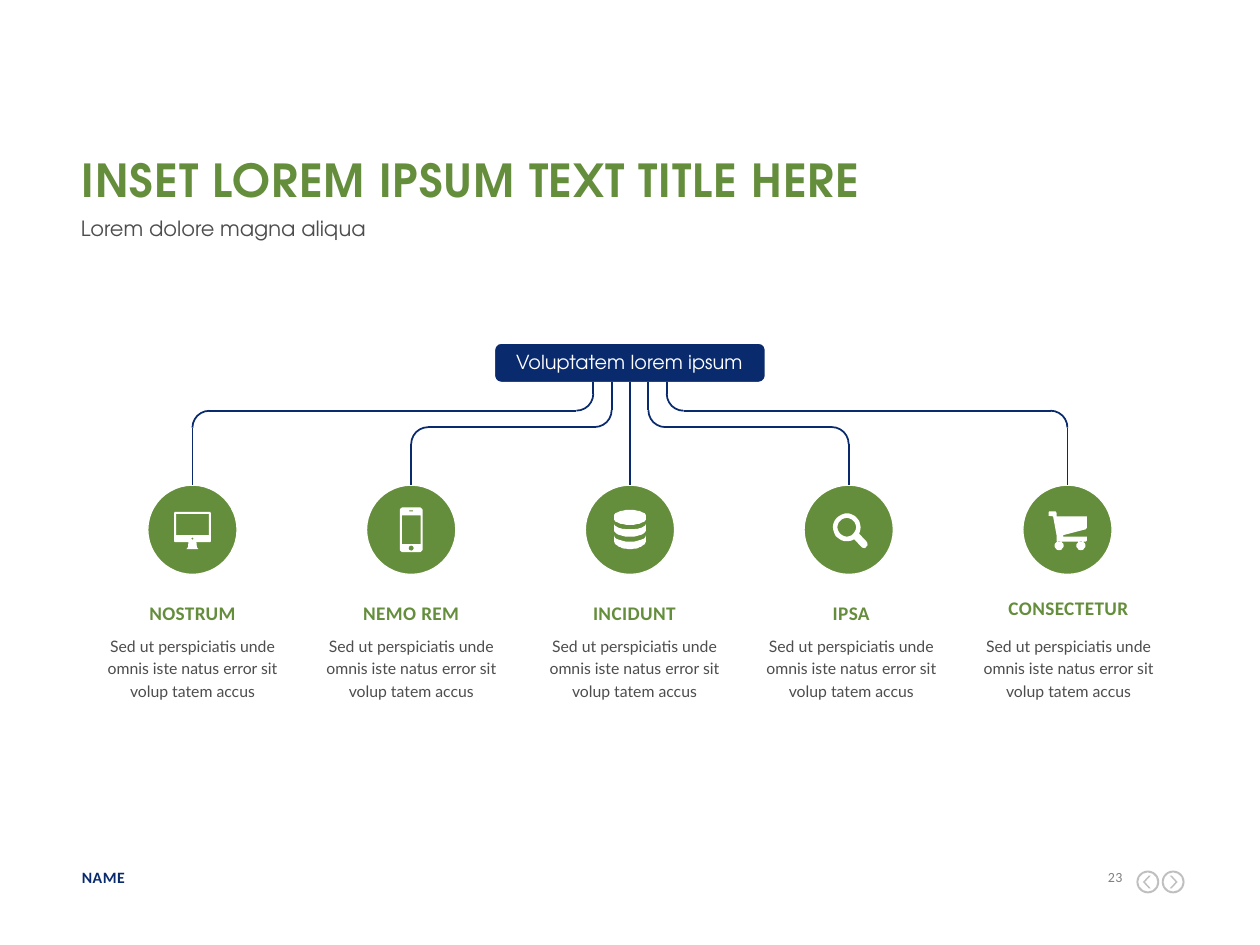
from math import cos, sin, radians
from lxml.etree import SubElement
from pptx import Presentation
from pptx.dml.color import RGBColor as Rgb
from pptx.enum.shapes import MSO_CONNECTOR as Conn, MSO_SHAPE as Kind
from pptx.enum.text import MSO_ANCHOR as Anchor, PP_ALIGN as Align
from pptx.oxml.ns import qn
from pptx.util import Cm, Pt

HUES = {"navy": "092A6D", "green": "658E3C", "text": "4D4D4D",
        "gray": "808080", "pale": "BFBFBF", "white": "FFFFFF"}
HEAD = "TeX Gyre Adventor"
MID, STEP = 12.7, 4.41      # centre of the tree, gap between branches
TOP, DISC = 9.78, 1.8       # top and size of the discs
BEND = 0.34                 # radius of the line corners


def hue(name):
    return Rgb.from_string(HUES[name])


class Page:
    def __init__(self, slide):
        self.slide = slide
        self.shapes = slide.shapes

    def text(self, x, y, w, h, words, size, color, font="Calibri",
             bold=False, align=Align.LEFT, lead=None, after=0, track=0):
        frame = self.shapes.add_textbox(Cm(x), Cm(y), Cm(w), Cm(h)).text_frame
        frame.word_wrap = True
        frame.vertical_anchor = Anchor.TOP
        frame.margin_left = frame.margin_right = 0
        frame.margin_top = frame.margin_bottom = 0
        para = frame.paragraphs[0]
        para.alignment = align
        para.space_after = Pt(after)
        if lead:
            para.line_spacing = Pt(lead)
        run = para.add_run()
        run.text = words
        run.font.name, run.font.size = font, Pt(size)
        run.font.bold = bold
        run.font.color.rgb = hue(color)
        if track:
            run._r.get_or_add_rPr().set("spc", str(round(track * 100)))

    def paint(self, shape, fill=None, line=None, width=0.75):
        shape.shadow.inherit = False
        if fill:
            shape.fill.solid()
            shape.fill.fore_color.rgb = hue(fill)
        else:
            shape.fill.background()
        if line:
            shape.line.color.rgb = hue(line)
            shape.line.width = Pt(width)
        else:
            shape.line.fill.background()
        return shape

    def shape(self, kind, x, y, w, h, turn=0, adj=None, **look):
        item = self.shapes.add_shape(kind, Cm(x), Cm(y), Cm(w), Cm(h))
        item.rotation = turn
        if adj is not None:
            item.adjustments[0] = adj
        return self.paint(item, **look)

    def line(self, x1, y1, x2, y2, start=None, end=None):
        item = self.shapes.add_connector(
            Conn.STRAIGHT, Cm(x1), Cm(y1), Cm(x2), Cm(y2))
        item.line.color.rgb = hue("navy")
        item.line.width = Pt(1)
        SubElement(item._element.spPr, qn("a:effectLst"))
        if start:
            item.begin_connect(start, 2)
        if end:
            item.end_connect(end, 0)

    def arc(self, x, y, turn):
        self.shape(Kind.ARC, x, y, 2 * BEND, 2 * BEND, turn,
                   line="navy", width=1)

    def icon(self, x, y, loops):
        """Draw closed loops, in hundredths of a cm around (x, y)."""
        pen = self.shapes.build_freeform(*loops[0][0], scale=Cm(0.01))
        for num, loop in enumerate(loops):
            if num:
                pen.move_to(*loop[0])
            pen.add_line_segments(loop[1:], close=True)
        self.paint(pen.convert_to_shape(Cm(x), Cm(y)), fill="white")


def curve(x, y, rx, ry, a=0, b=360, steps=24):
    turns = [radians(a + (b - a) * i / steps) for i in range(steps + 1)]
    return [(x + rx * cos(t), y + ry * sin(t)) for t in turns]


def box(x1, y1, x2, y2, r=0):
    if not r:
        return [(x1, y1), (x2, y1), (x2, y2), (x1, y2)]
    spots = [(x2 - r, y2 - r), (x1 + r, y2 - r),
             (x1 + r, y1 + r), (x2 - r, y1 + r)]
    return [p for i, (x, y) in enumerate(spots)
            for p in curve(x, y, r, r, 90 * i, 90 * i + 90, 6)]


def band(y1, dip, y2, drop):
    return curve(0, y1, 32, dip, 180, 0) + curve(0, y2, 32, drop, 0, 180)


SCREEN = [box(-37, -36, 37, 25, 3), box(-33, -32, 33, 11),
          [(-8, 25), (-9, 35), (-12, 39), (12, 39), (9, 35), (8, 25)],
          curve(0, 18, 2, 2)]
PHONE = [box(-23, -45, 23, 45, 7), box(-19, -29, 19, 29),
         curve(0, 37, 5, 5), box(-4, -39, 4, -37)]
DISKS = [curve(0, -28, 32, 12, 180, 360) + curve(0, -22, 32, 12, 0, 180),
         band(-12, 11, 0, 14), band(11, 13, 22, 17)]
LENS = [curve(-4, -5, 28, 28, 58, 388)
        + [(37, 25), (38, 31), (33, 37), (27, 36)],
        curve(-4, -5, 19, 19)]
CART = [[(-9, 11), (37, -1), (39, -4), (39, -27), (-22, -27), (-22, -34),
         (-24, -37), (-37, -37), (-38, -35), (-38, -28), (-29, -27),
         (-22, 11), (-22, 22), (-19, 24), (37, 24), (39, 22), (39, 14),
         (-9, 14)],
        curve(27, 32, 9, 9), curve(-17, 32, 9, 9)]

# label, icon, text shift, label top
ITEMS = [("NOSTRUM", SCREEN, 0, 12.09), ("NEMO REM", PHONE, 0, 12.09),
         ("INCIDUNT", DISKS, 0.09, 12.09), ("IPSA", LENS, 0.05, 12.09),
         ("CONSECTETUR", CART, 0.02, 11.99)]
BODY = "Sed ut perspiciatis unde omnis iste natus error sit volup tatem accus"


def branch(page, pos, root, disc):
    """Link the root to one disc; pos runs from -2 to 2."""
    stem, goal = MID + 0.37 * pos, MID + STEP * pos
    if not pos:
        page.line(stem, 7.72, goal, TOP, root, disc)
        return
    side = 1 if pos > 0 else -1
    level = 8.28 if abs(pos) == 2 else 8.61
    page.line(stem, 7.7, stem, level - BEND)
    page.arc(stem + (side - 1) * BEND, level - 2 * BEND,
             180 if side > 0 else 90)
    page.line(stem + side * BEND, level, goal - side * BEND, level)
    page.arc(goal - (side + 1) * BEND, level, 0 if side > 0 else 270)
    page.line(goal, level + BEND, goal, TOP, end=disc)


def main():
    deck = Presentation()
    deck.slide_width, deck.slide_height = Cm(25.4), Cm(19.05)
    page = Page(deck.slides.add_slide(deck.slide_layouts[6]))

    # Footer and page arrows
    page.text(1.65, 17.5, 4.95, 0.38, "NAME", 9, "navy", bold=True, track=0.3)
    page.text(22.05, 17.5, 0.58, 0.33, "23", 8, "gray",
              align=Align.RIGHT, track=0.3)
    for x, tip, turn in ((22.91, 0.13, 180), (23.42, 0.16, 0)):
        page.shape(Kind.DONUT, x, 17.55, 0.46, 0.46, adj=0.08, fill="pale")
        page.shape(Kind.CHEVRON, x + tip, 17.65, 0.16, 0.26, turn,
                   adj=0.75, fill="pale")

    # Titles
    page.text(1.65, 3.07, 22.1, 0.86, "INSET LOREM IPSUM TEXT TITLE HERE",
              26, "green", HEAD, bold=True, track=0.5)
    page.text(1.63, 4.43, 22.1, 1.07, "Lorem dolore magna aliqua",
              12, "text", HEAD, lead=12)

    # Root of the tree
    root = page.shape(Kind.ROUNDED_RECTANGLE, 9.97, 6.92, 5.46, 0.79,
                      fill="navy", line="white")
    page.text(10.24, 7.06, 4.9, 0.48, "Voluptatem lorem ipsum", 11, "white",
              HEAD, align=Align.CENTER)

    # Branches
    for pos, (label, icon, shift, top) in enumerate(ITEMS, -2):
        mid = MID + STEP * pos
        disc = page.shape(Kind.OVAL, mid - DISC / 2, TOP, DISC, DISC,
                          fill="green", line="white")
        branch(page, pos, root, disc)
        page.icon(mid, TOP + DISC / 2, icon)
        left = mid + shift - 1.84
        page.text(left, top, 3.68, 0.48, label, 11, "green", bold=True,
                  align=Align.CENTER, lead=14, after=6, track=0.2)
        page.text(left, 12.75, 3.68, 1.35, BODY, 9, "text", "Lato",
                  align=Align.CENTER, lead=13, after=6)

    deck.save("out.pptx")


if __name__ == "__main__":
    main()
